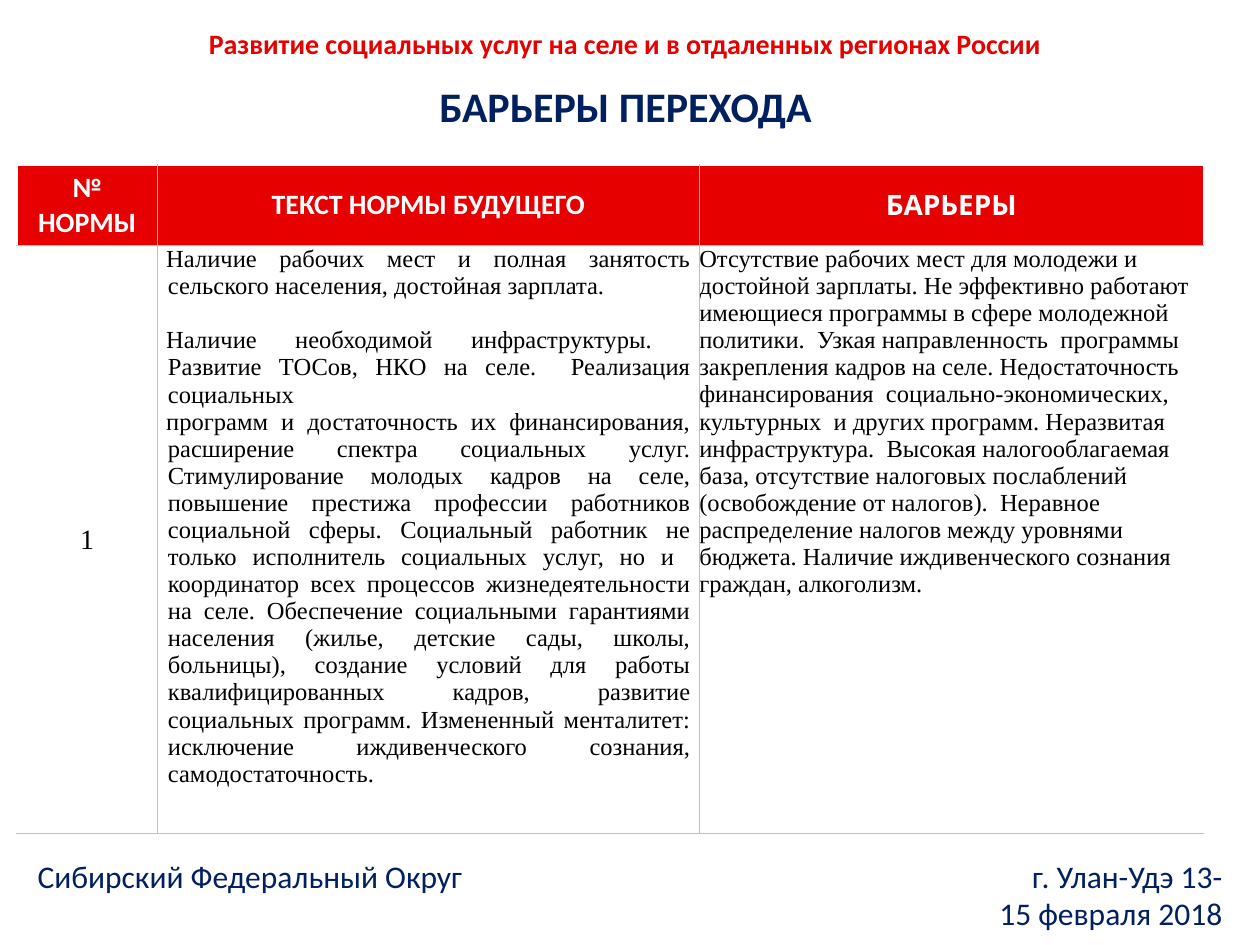
"""Build the slide on barriers to transition: headings, a table and a footer."""
from lxml import etree
from pptx import Presentation
from pptx.dml.color import RGBColor
from pptx.enum.text import MSO_ANCHOR, PP_ALIGN
from pptx.oxml.ns import qn
from pptx.util import Pt

LEFT, MID, RIGHT, FULL = PP_ALIGN.LEFT, PP_ALIGN.CENTER, PP_ALIGN.RIGHT, PP_ALIGN.JUSTIFY
TOP, CENTER = MSO_ANCHOR.TOP, MSO_ANCHOR.MIDDLE
HUES = {"red": "E60000", "navy": "002060", "white": "FFFFFF", "black": "000000", "gray": "BFBFBF"}
SANS, SERIF = "Calibri", "Times New Roman"

LABELS = [
    ("Развитие социальных услуг на селе и в отдаленных регионах России",
     (50.4, 10.8, 613.4, 28), 16, "red", True, MID, CENTER),
    ("БАРЬЕРЫ ПЕРЕХОДА", (242.6, 42.5, 229.7, 36), 24, "navy", True, MID, TOP),
    ("Сибирский Федеральный Округ", (14.4, 486, 360, 44), 18, "navy", False, LEFT, TOP),
    ("г. Улан-Удэ 13-\v15 февраля 2018", (525.6, 486, 180, 44), 18, "navy", False, RIGHT, TOP),
]
HEADS = [("№ НОРМЫ", SANS), ("ТЕКСТ НОРМЫ БУДУЩЕГО", SANS), ("БАРЬЕРЫ", "Cabin")]
NORMS = [
    "Наличие рабочих мест и полная занятость сельского населения, достойная зарплата.",
    "Наличие необходимой инфраструктуры.  Развитие ТОСов, НКО на селе.  Реализация социальных",
    "программ и достаточность их финансирования, расширение спектра социальных услуг. "
    "Стимулирование молодых кадров на селе, повышение престижа профессии работников "
    "социальной сферы. Социальный работник не только исполнитель социальных услуг, но и  "
    "координатор всех процессов жизнедеятельности на селе. Обеспечение социальными "
    "гарантиями населения (жилье, детские сады, школы, больницы), создание условий для работы "
    "квалифицированных кадров, развитие социальных программ. Измененный менталитет: "
    "исключение иждивенческого сознания, самодостаточность.",
]
BLOCKS = [
    "Отсутствие рабочих мест для молодежи и достойной зарплаты. Не эффективно работают "
    "имеющиеся программы в сфере молодежной политики.  Узкая направленность  программы "
    "закрепления кадров на селе. Недостаточность финансирования  социально-экономических, "
    "культурных  и других программ. Неразвитая инфраструктура.  Высокая налогооблагаемая "
    "база, отсутствие налоговых послаблений (освобождение от налогов).  Неравное "
    "распределение налогов между уровнями бюджета. Наличие иждивенческого сознания граждан, "
    "алкоголизм.",
]
BODY = [(["1"], 16, MID, CENTER, (5, 3)), (NORMS, 14, FULL, TOP, (5, 0)),
        (BLOCKS, 14, LEFT, TOP, (0, 0))]
WIDTHS, HEIGHTS = (80.4, 309.6, 288), (46.1, 336)
AT = (9.6, 94.3)


def color(name):
    return RGBColor.from_string(HUES[name])


def write(frame, lines, size, face, hue, bold, align):
    frame.text = "\n".join(lines)
    for para in frame.paragraphs:
        para.alignment = align
        font = para.font
        font.size, font.name, font.bold = Pt(size), face, bold
        font.color.rgb = color(hue)


def label(slide, text, box, size, hue, bold, align, anchor):
    frame = slide.shapes.add_textbox(*map(Pt, box)).text_frame
    frame.word_wrap = True
    frame.vertical_anchor = anchor
    write(frame, [text], size, SANS, hue, bold, align)
    return frame


def edge(cell, sides):
    props = cell._tc.get_or_add_tcPr()
    for spot, side in enumerate(sides):
        line = etree.Element(qn("a:ln" + side), w=str(Pt(0.5)))
        fill = etree.SubElement(line, qn("a:solidFill"))
        etree.SubElement(fill, qn("a:srgbClr"), val=HUES["gray"])
        props.insert(spot, line)


def pad(cell, anchor, side, end):
    cell.vertical_anchor = anchor
    cell.margin_left = cell.margin_right = Pt(side)
    cell.margin_top = cell.margin_bottom = Pt(end)


def grid(slide):
    size = (sum(WIDTHS), sum(HEIGHTS))
    table = slide.shapes.add_table(2, 3, *map(Pt, AT + size)).table
    for row, high in zip(table.rows, HEIGHTS):
        row.height = Pt(high)
    for col, wide in enumerate(WIDTHS):
        table.columns[col].width = Pt(wide)
        sides = ("L" if col else "") + ("R" if col < 2 else "")
        head, cell = table.cell(0, col), table.cell(1, col)
        text, face = HEADS[col]
        write(head.text_frame, [text], 16, face, "white", True, MID)
        pad(head, CENTER, 5, 3)
        head.fill.solid()
        head.fill.fore_color.rgb = color("red")
        edge(head, sides + "B")
        lines, points, align, anchor, gaps = BODY[col]
        write(cell.text_frame, lines, points, SERIF, "black", False, align)
        pad(cell, anchor, *gaps)
        cell.fill.background()
        edge(cell, sides + "TB")
    paras = table.cell(1, 1).text_frame.paragraphs
    paras[1].space_before = Pt(15.5)
    for para in paras:
        props = para._p.get_or_add_pPr()
        props.set("marL", str(Pt(1)))
        props.set("indent", str(Pt(-1)))


def main():
    deck = Presentation()
    deck.slide_width, deck.slide_height = Pt(720), Pt(540)
    slide = deck.slides.add_slide(deck.slide_layouts[6])
    grid(slide)
    for item in LABELS:
        label(slide, *item)
    deck.save("out.pptx")


if __name__ == "__main__":
    main()
